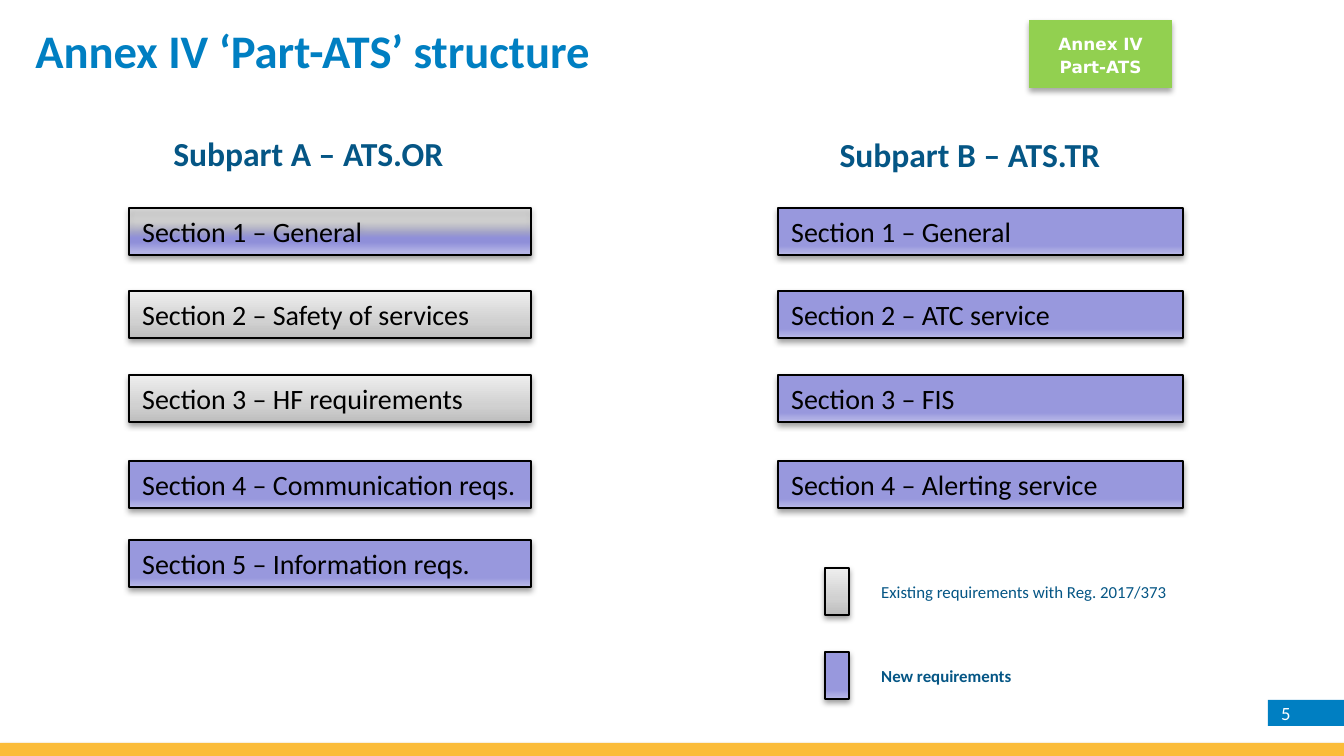
from lxml.etree import SubElement
from pptx import Presentation
from pptx.dml.color import RGBColor
from pptx.enum.shapes import MSO_SHAPE
from pptx.enum.text import MSO_ANCHOR, PP_ALIGN
from pptx.oxml.ns import qn
from pptx.util import Pt

PX = 914400 / 134.4

BLUE, NAVY, WHITE, BLACK = "007FC2", "055685", "FFFFFF", "000000"
AMBER, GREEN = "FBBC39", "92D050"

# Gradients: angle in degrees, then stops of (position %, colour, opacity %)
EXISTING = (270, [(0, "BDBDBD", 100), (35, "D1D1D1", 100), (100, "EEEEEE", 100)])
NEW = (90, [(0, "9898DD", 100), (80, "9898DD", 100), (100, "BABAE8", 100)])
MIXED = (90, [(30, "B3B3B3", 34), (64, "9090DB", 100), (74, "9090DB", 100),
              (92, "B5B5E7", 100)])

TITLE = "Annex IV ‘Part-ATS’ structure"
SUBPARTS = [
    # heading, heading box, section left and width, sections
    ("Subpart A – ATS.OR", (86, 137, 445, 43), 129, 402, [
        ("Section 1 – General", MIXED),
        ("Section 2 – Safety of services", EXISTING),
        ("Section 3 – HF requirements", EXISTING),
        ("Section 4 – Communication reqs.", NEW),
        ("Section 5 – Information reqs.", NEW),
    ]),
    ("Subpart B – ATS.TR", (747, 126, 446, 55), 778, 405, [
        ("Section 1 – General", NEW),
        ("Section 2 – ATC service", NEW),
        ("Section 3 – FIS", NEW),
        ("Section 4 – Alerting service", NEW),
    ]),
]
SECTION_TOPS = [208, 291, 375, 461, 540]
SECTION_HEIGHT = 47
LEGEND = [
    ("Existing requirements with Reg. 2017/373", EXISTING, False),
    ("New requirements", NEW, True),
]
LEGEND_TOP, LEGEND_STEP = 568, 84


def px(value):
    return round(value * PX)


def rgb(value):
    return RGBColor.from_string(value)


def add_gradient(shape, angle, stops):
    gradient = SubElement(shape._element.spPr, qn("a:gradFill"), rotWithShape="1")
    stop_list = SubElement(gradient, qn("a:gsLst"))
    for position, value, opacity in stops:
        stop = SubElement(stop_list, qn("a:gs"), pos=str(position * 1000))
        color = SubElement(stop, qn("a:srgbClr"), val=value)
        if opacity < 100:
            SubElement(color, qn("a:alpha"), val=str(opacity * 1000))
    SubElement(gradient, qn("a:lin"), ang=str(angle * 60000), scaled="0")


def add_shadow(shape, opacity, distance):
    effects = shape._element.spPr.find(qn("a:effectLst"))
    shadow = SubElement(effects, qn("a:outerShdw"), blurRad=str(Pt(3.1)),
                        dist=str(Pt(distance)), dir="5400000", rotWithShape="0")
    color = SubElement(shadow, qn("a:srgbClr"), val=BLACK)
    SubElement(color, qn("a:alpha"), val=str(opacity * 1000))


def add_rectangle(page, place, fill):
    """Add a flat rectangle for a hex fill, an outlined one for a gradient."""
    shape = page.shapes.add_shape(MSO_SHAPE.RECTANGLE, *map(px, place))
    shape.shadow.inherit = False
    if isinstance(fill, str):
        shape.fill.solid()
        shape.fill.fore_color.rgb = rgb(fill)
        shape.line.fill.background()
    else:
        add_gradient(shape, *fill)
        shape.line.color.rgb = rgb(BLACK)
        shape.line.width = Pt(0.75)
        add_shadow(shape, 38, 1.6)
    return shape


def write(shape, lines, size, color, bold=False, font="Calibri",
          align=PP_ALIGN.LEFT, anchor=MSO_ANCHOR.TOP, spacing=None):
    frame = shape.text_frame
    frame.word_wrap = True
    frame.vertical_anchor = anchor
    for index, line in enumerate(lines):
        para = frame.add_paragraph() if index else frame.paragraphs[0]
        para.alignment = align
        para.line_spacing = spacing
        span = para.add_run()
        span.text = line
        span.font.name = font
        span.font.size = Pt(size)
        span.font.bold = bold
        span.font.color.rgb = rgb(color)


def add_label(page, place, text, size, bold, **layout):
    box = page.shapes.add_textbox(*map(px, place))
    write(box, [text], size, NAVY, bold, **layout)


def main():
    deck = Presentation()
    deck.slide_width, deck.slide_height = px(1344), px(756)
    page = deck.slides.add_slide(deck.slide_layouts[5])

    title = page.shapes.title
    title.left, title.top, title.width, title.height = map(px, (22, 21, 1297, 97))
    write(title, [TITLE], 25, BLUE, True, spacing=0.9)

    footer = add_rectangle(page, (0, 743, 1344, 13), AMBER)
    add_shadow(footer, 35, 1.8)
    number = add_rectangle(page, (1268, 700, 76, 26), BLUE)
    write(number, ["5"], 10, WHITE, anchor=MSO_ANCHOR.MIDDLE)

    for heading, place, left, width, sections in SUBPARTS:
        add_label(page, place, heading, 18, True,
                  align=PP_ALIGN.CENTER, anchor=MSO_ANCHOR.BOTTOM)
        for top, (name, fill) in zip(SECTION_TOPS, sections):
            section = add_rectangle(page, (left, top, width, SECTION_HEIGHT), fill)
            write(section, [name], 15, BLACK)

    for index, (text, fill, bold) in enumerate(LEGEND):
        top = LEGEND_TOP + index * LEGEND_STEP
        add_label(page, (868, top + 7, 410, 34), text, 9, bold)
        add_rectangle(page, (825, top, 24, SECTION_HEIGHT), fill)

    badge = add_rectangle(page, (1029, 20, 143, 68), GREEN)
    add_shadow(badge, 35, 1.8)
    write(badge, ["Annex IV", "Part-ATS"], 9, WHITE, True, "DejaVu Sans",
          PP_ALIGN.CENTER, MSO_ANCHOR.MIDDLE, Pt(12))

    deck.save("out.pptx")


if __name__ == "__main__":
    main()
